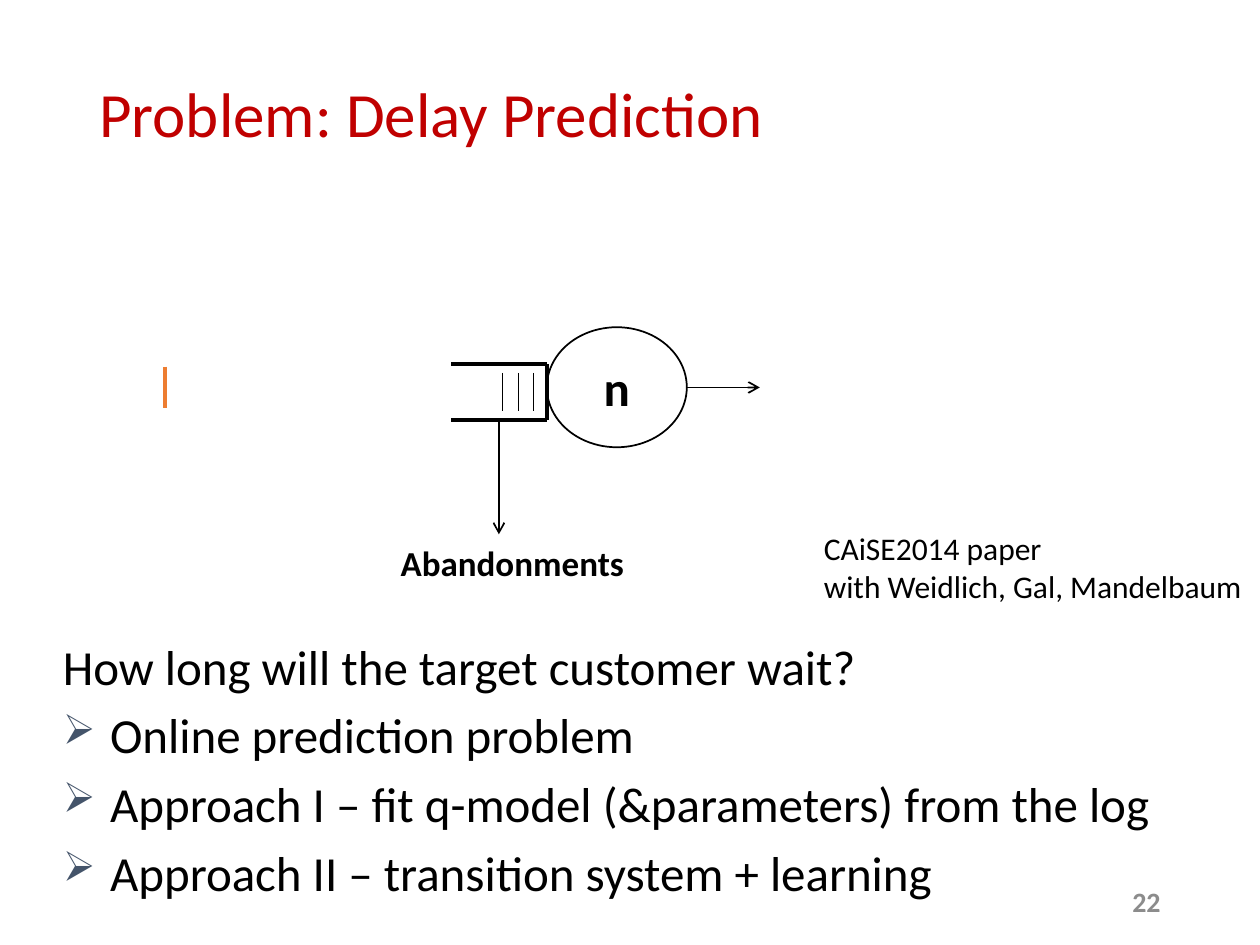
from dataclasses import dataclass

from lxml.etree import SubElement
from pptx import Presentation
from pptx.dml.color import RGBColor
from pptx.enum.shapes import MSO_CONNECTOR, MSO_SHAPE
from pptx.enum.text import MSO_ANCHOR, PP_ALIGN
from pptx.oxml.ns import qn
from pptx.slide import Slide
from pptx.util import Pt

COLORS = {
    "title": "C00000",
    "text": "000000",
    "number": "8C8C8C",
    "bullet": "44546A",
    "marker": "ED7D31",
}


@dataclass
class SlideBuilder:
    slide: Slide
    font: str = "Calibri"

    def color(self, name):
        return RGBColor.from_string(COLORS[name])

    def set_text(self, text_frame, text, size, color="text", bold=False, align=PP_ALIGN.LEFT):
        text_frame.text = text
        for paragraph in text_frame.paragraphs:
            paragraph.alignment = align
            for run in paragraph.runs:
                run.font.name = self.font
                run.font.size = Pt(size)
                run.font.bold = bold
                run.font.color.rgb = self.color(color)

    def text(self, left, top, width, height, text, size, anchor=MSO_ANCHOR.TOP, wrap=True, **style):
        box = self.slide.shapes.add_textbox(Pt(left), Pt(top), Pt(width), Pt(height))
        text_frame = box.text_frame
        text_frame.word_wrap = wrap
        text_frame.vertical_anchor = anchor
        self.set_text(text_frame, text, size, **style)
        return text_frame

    def bullet(self, paragraph, indent=27):
        """Give the paragraph a hanging arrowhead bullet."""
        properties = paragraph._p.get_or_add_pPr()
        properties.set("marL", str(Pt(indent)))
        properties.set("indent", str(Pt(-indent)))
        color = SubElement(properties, qn("a:buClr"))
        SubElement(color, qn("a:srgbClr"), val=COLORS["bullet"])
        SubElement(properties, qn("a:buSzPct"), val="85000")
        SubElement(properties, qn("a:buChar"), char="➢")

    def line(self, start, end, width=1, color="text", arrow=False):
        connector = self.slide.shapes.add_connector(
            MSO_CONNECTOR.STRAIGHT, *(Pt(value) for value in (*start, *end)))
        connector.line.color.rgb = self.color(color)
        connector.line.width = Pt(width)
        properties = connector._element.spPr
        if arrow:
            SubElement(properties.find(qn("a:ln")), qn("a:tailEnd"), type="arrow")
        SubElement(properties, qn("a:effectLst"))

    def ellipse(self, left, top, width, height, text, size):
        shape = self.slide.shapes.add_shape(
            MSO_SHAPE.OVAL, Pt(left), Pt(top), Pt(width), Pt(height))
        shape.shadow.inherit = False
        shape.fill.background()
        shape.line.color.rgb = self.color("text")
        shape.line.width = Pt(1)
        shape.text_frame.vertical_anchor = MSO_ANCHOR.MIDDLE
        self.set_text(shape.text_frame, text, size, bold=True, align=PP_ALIGN.CENTER)


def draw_queue(builder):
    left, right, top, bottom = 257.8, 312.5, 208.1, 239.8
    corners = [(left, top), (right, top), (right, bottom), (left, bottom)]
    for start, end in zip(corners, corners[1:]):
        builder.line(start, end, width=2.25)
    for customer in range(3):
        x = 304.6 - 8.6 * customer
        builder.line((x, 213.1), (x, 234.7), width=0.5)

    builder.ellipse(right, 187, 80, 68.6, "n", 28)
    builder.line((392.5, 221.4), (434.2, 221.4), arrow=True)
    builder.line((285.1, 239.3), (285.1, 305.3), arrow=True)
    builder.text(221.8, 306, 147.6, 31.7, "Abandonments", 20, bold=True)


def main():
    presentation = Presentation()
    presentation.slide_width, presentation.slide_height = Pt(720), Pt(540)
    builder = SlideBuilder(presentation.slides.add_slide(presentation.slide_layouts[6]))

    builder.text(49.7, 12.2, 620.6, 104.4, "Problem: Delay Prediction", 36,
                 anchor=MSO_ANCHOR.MIDDLE, color="title")
    builder.text(508.3, 500.4, 162, 28.8, "22", 16, anchor=MSO_ANCHOR.MIDDLE,
                 color="number", bold=True, align=PP_ALIGN.RIGHT)

    points = [
        "How long will the target customer wait?",
        "Online prediction problem",
        "Approach I – fit q-model (&parameters) from the log",
        "Approach II – transition system + learning",
    ]
    body = builder.text(28.8, 360, 642.2, 170, "\n".join(points), 28)
    for paragraph in body.paragraphs:
        paragraph.space_before = Pt(5.6)
    for paragraph in body.paragraphs[1:]:
        builder.bullet(paragraph)

    builder.text(463.7, 298.8, 256.3, 51.1,
                 "CAiSE2014 paper\nwith Weidlich, Gal, Mandelbaum", 18, wrap=False)
    builder.line((94.3, 209.5), (94.3, 233.3), width=2.25, color="marker")
    draw_queue(builder)

    presentation.save("out.pptx")


if __name__ == "__main__":
    main()
